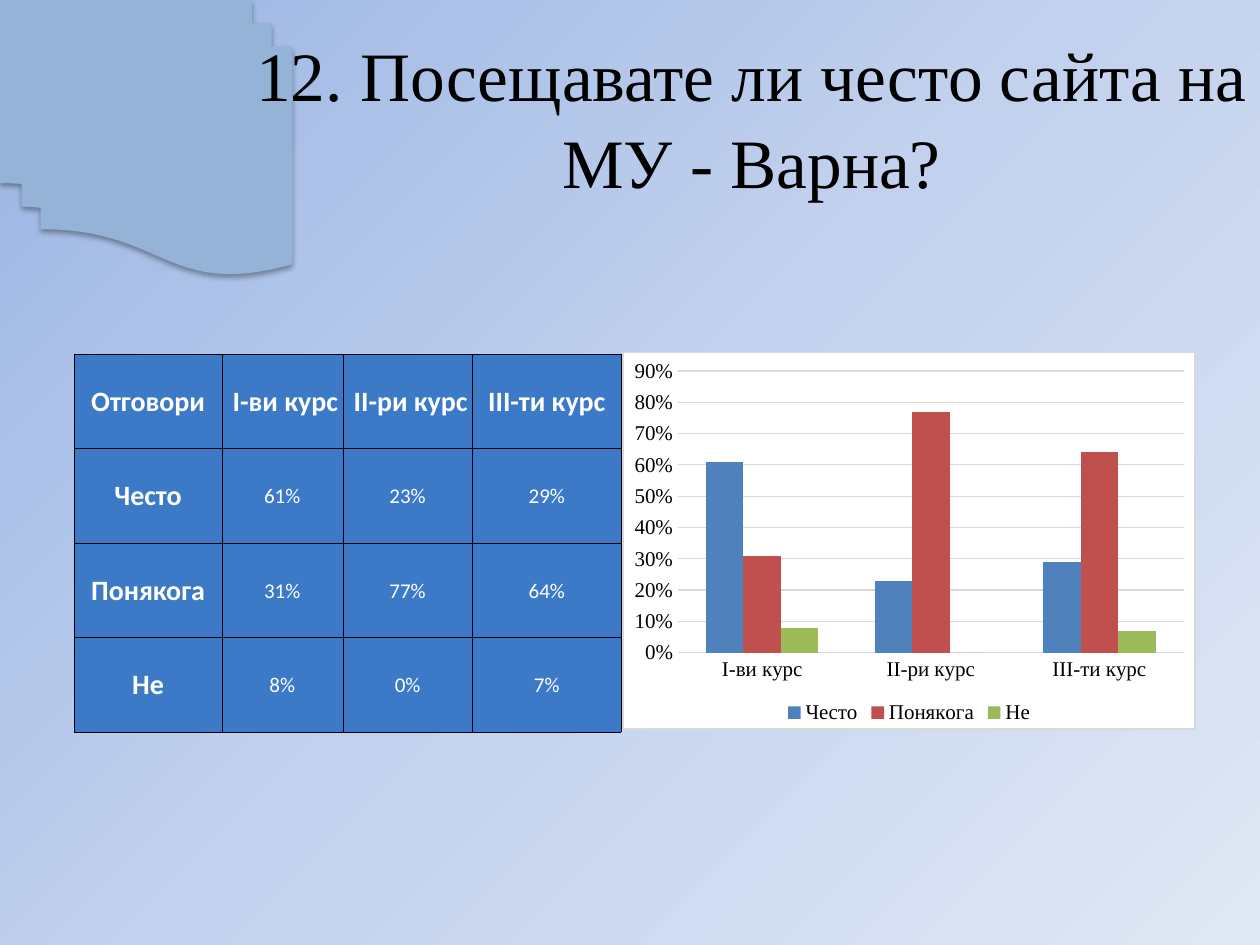
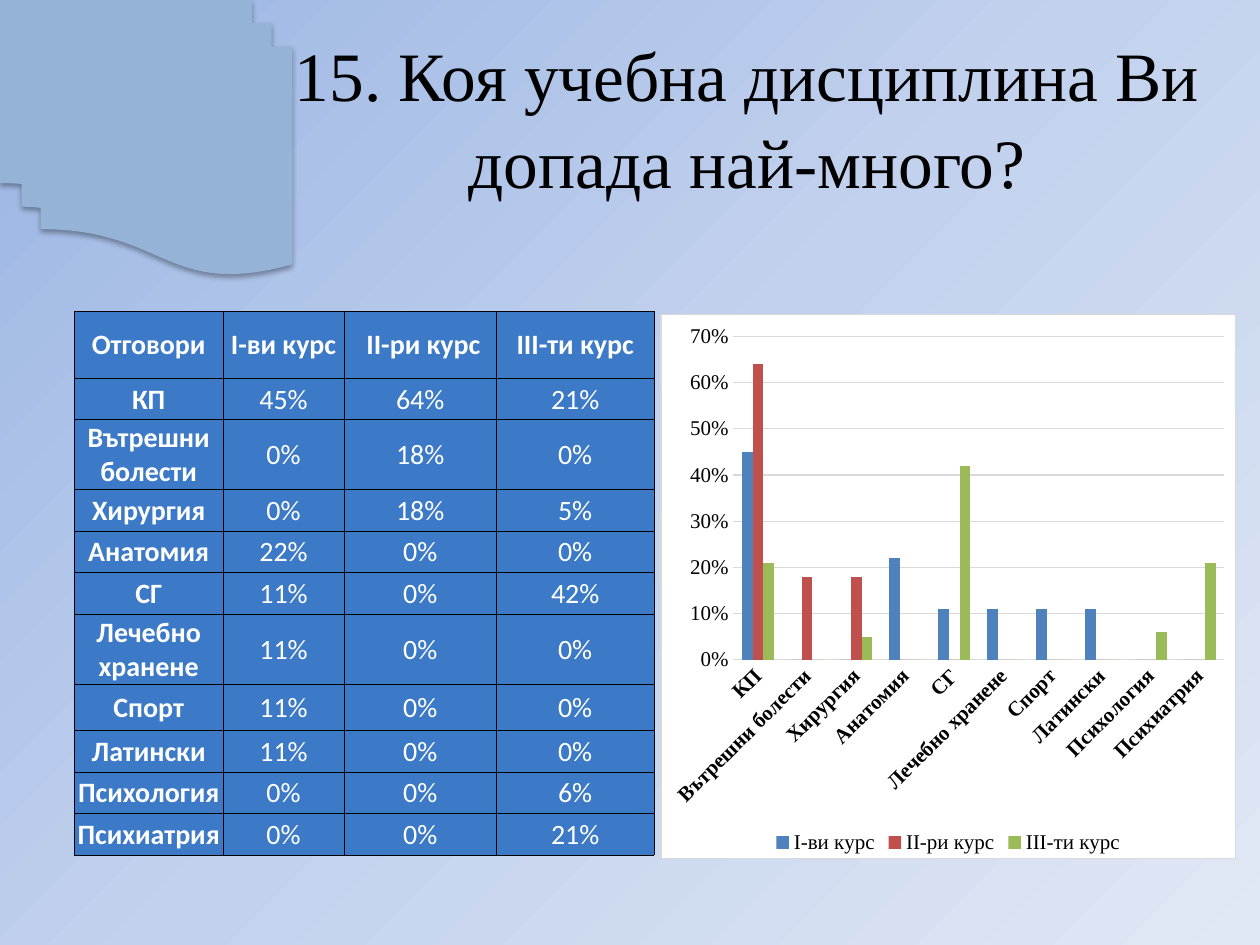
from collections import namedtuple
from copy import deepcopy
from dataclasses import dataclass

from lxml.etree import SubElement
from pptx import Presentation
from pptx.chart.data import CategoryChartData
from pptx.dml.color import RGBColor
from pptx.enum.chart import XL_CHART_TYPE, XL_LEGEND_POSITION, XL_TICK_MARK
from pptx.enum.shapes import MSO_SHAPE
from pptx.enum.text import MSO_ANCHOR, MSO_AUTO_SIZE, PP_ALIGN
from pptx.oxml.ns import qn
from pptx.util import Inches, Pt

Box = namedtuple("Box", "left top width height")


@dataclass(frozen=True)
class Theme:
    background: tuple = ("9AB5E4", "C2D1ED", "E1E8F5")
    ornament: str = "95B3D7"
    ink: str = "000000"
    paper: str = "FFFFFF"
    table_fill: str = "3C7AC8"
    grid: str = "D9D9D9"
    series: tuple = ("4F81BD", "C0504D", "9BBB59")
    title_font: str = "Times New Roman"
    table_font: str = "Calibri"
    title_size: float = 39.6
    heading_size: int = 16
    chart_size: int = 12


THEME = Theme()


def rgb(value):
    return RGBColor.from_string(value)


def place(shape, box):
    shape.left, shape.top, shape.width, shape.height = map(Inches, box)


def style_font(font, name, size, color, bold=False):
    font.name, font.size, font.bold = name, Pt(size), bold
    font.color.rgb = rgb(color)


def add_solid_fill(parent, color):
    fill = SubElement(parent, qn("a:solidFill"))
    return SubElement(fill, qn("a:srgbClr"), val=color)


def decorate_master(master, slide):
    """Give the master its gradient and the folded-paper ornament, drawn on slide and moved."""
    fill = master.background.fill
    fill.gradient()
    fill.gradient_angle = 315
    stops = master.element.find(".//" + qn("a:gsLst"))
    stops.insert(1, deepcopy(stops[0]))
    for index, stop in enumerate(fill.gradient_stops):
        stop.color.rgb = rgb(THEME.background[index])
        stop.position = index / 2

    ornament = slide.shapes.add_shape(
        MSO_SHAPE.FLOWCHART_MULTIDOCUMENT, 0, 0, Inches(2.32), Inches(2.18))
    ornament.fill.solid()
    ornament.fill.fore_color.rgb = rgb(THEME.ornament)
    ornament.line.fill.background()
    ornament.shadow.inherit = False
    ornament.element.spPr.find(qn("a:xfrm")).set("flipH", "1")
    effects = ornament.element.spPr.find(qn("a:effectLst"))
    shadow = SubElement(effects, qn("a:outerShdw"), blurRad=str(Pt(3.1)),
                        dist=str(Pt(1.8)), dir="5400000", rotWithShape="0")
    color = SubElement(shadow, qn("a:srgbClr"), val=THEME.ink)
    SubElement(color, qn("a:alpha"), val="35000")
    master.shapes.element.insert(2, ornament.element)


def set_title(slide, text, box):
    title = slide.shapes.title
    place(title, box)
    frame = title.text_frame
    frame.auto_size = MSO_AUTO_SIZE.NONE
    frame.word_wrap = True
    frame.vertical_anchor = MSO_ANCHOR.MIDDLE
    paragraph = frame.paragraphs[0]
    paragraph.alignment = PP_ALIGN.CENTER
    paragraph.line_spacing = 1.05
    run = paragraph.add_run()
    run.text = text
    style_font(run.font, THEME.title_font, THEME.title_size, THEME.ink)


def fill_cell(cell, text, size, bold):
    cell.margin_left = cell.margin_top = cell.margin_right = Inches(0.01)
    cell.margin_bottom = 0
    cell.vertical_anchor = MSO_ANCHOR.MIDDLE
    cell.fill.solid()
    cell.fill.fore_color.rgb = rgb(THEME.table_fill)
    paragraph = cell.text_frame.paragraphs[0]
    paragraph.alignment = PP_ALIGN.CENTER
    run = paragraph.add_run()
    run.text = text
    style_font(run.font, THEME.table_font, size, THEME.paper, bold)
    properties = cell._tc.get_or_add_tcPr()
    for index, side in enumerate(("lnL", "lnR", "lnT", "lnB")):
        line = SubElement(properties, qn(f"a:{side}"), w=str(Pt(0.25)))
        add_solid_fill(line, THEME.ink)
        properties.insert(index, line)


def add_answer_table(slide, box, headings, answers, widths, heights, value_size):
    table = slide.shapes.add_table(
        len(heights), len(widths), *map(Inches, box)).table
    table.first_row = table.horz_banding = False
    for column, width in zip(table.columns, widths):
        column.width = Inches(width)
    for row, height in zip(table.rows, heights):
        row.height = Inches(height)
    rows = [["Отговори", *headings]]
    rows += [[name, *(f"{value}%" for value in values)]
             for name, values in answers.items()]
    for row_index, texts in enumerate(rows):
        for column_index, text in enumerate(texts):
            is_heading = row_index == 0 or column_index == 0
            size = THEME.heading_size if is_heading else value_size
            fill_cell(table.cell(row_index, column_index), text, size, is_heading)


def style_axis(axis, bold=False):
    axis.major_tick_mark = axis.minor_tick_mark = XL_TICK_MARK.NONE
    axis.format.line.fill.background()
    style_font(axis.tick_labels.font, THEME.title_font, THEME.chart_size,
               THEME.ink, bold)


def frame_chart(chart):
    """Give the chart area a white fill and a thin grey border."""
    properties = SubElement(chart.element, qn("c:spPr"))
    add_solid_fill(properties, THEME.paper)
    border = SubElement(properties, qn("a:ln"), w=str(Pt(0.75)))
    add_solid_fill(border, THEME.grid)
    chart.element.find(qn("c:chart")).addnext(properties)


def add_answer_chart(slide, box, categories, series, maximum, slanted):
    data = CategoryChartData(number_format="0%")
    data.categories = categories
    for name, values in series:
        data.add_series(name, [value / 100 for value in values])
    chart = slide.shapes.add_chart(
        XL_CHART_TYPE.COLUMN_CLUSTERED, *map(Inches, box), data).chart
    style_font(chart.font, THEME.table_font, 10, THEME.ink)
    frame_chart(chart)
    chart.has_title = False
    chart.has_legend = True
    chart.legend.position = XL_LEGEND_POSITION.BOTTOM
    chart.legend.include_in_layout = False
    style_font(chart.legend.font, THEME.title_font, THEME.chart_size, THEME.ink)

    plot = chart.plots[0]
    plot.gap_width, plot.overlap, plot.vary_by_categories = 150, 0, False
    for column, color in zip(plot.series, THEME.series):
        column.format.fill.solid()
        column.format.fill.fore_color.rgb = rgb(color)

    style_axis(chart.category_axis, bold=slanted)
    if slanted:
        axis = chart.element.find(".//" + qn("c:catAx"))
        axis.find(qn("c:txPr")).find(qn("a:bodyPr")).set("rot", "-2700000")
    value_axis = chart.value_axis
    style_axis(value_axis)
    value_axis.minimum_scale, value_axis.maximum_scale = 0, maximum
    value_axis.major_unit = 0.1
    value_axis.tick_labels.number_format = "0%"
    value_axis.tick_labels.number_format_is_linked = False
    value_axis.has_major_gridlines = True
    gridline = value_axis.major_gridlines.format.line
    gridline.width = Pt(0.75)
    gridline.color.rgb = rgb(THEME.grid)


def build_site_visits(slide):
    headings = [" I-ви курс", " II-ри курс", "III-ти курс"]
    answers = {
        "Често": (61, 23, 29),
        "Понякога": (31, 77, 64),
        "Не": (8, 0, 7),
    }
    set_title(slide, "12. Посещавате ли често сайта на МУ - Варна?",
              Box(1.93, 0.29, 8.07, 1.25))
    add_answer_table(slide, Box(0.59, 2.81, 4.33, 2.99), headings, answers,
                     widths=(1.17, 0.96, 1.03, 1.18), heights=[0.75] * 4,
                     value_size=12)
    courses = [heading.strip() for heading in headings]
    add_answer_chart(slide, Box(4.94, 2.79, 4.55, 3), courses,
                     answers.items(), maximum=0.9, slanted=False)


def build_favourite_subjects(slide):
    headings = ["I-ви курс", " II-ри курс", "III-ти курс"]
    answers = {
        "КП": (45, 64, 21),
        "Вътрешни болести": (0, 18, 0),
        "Хирургия": (0, 18, 5),
        "Анатомия": (22, 0, 0),
        "СГ": (11, 0, 42),
        "Лечебно хранене": (11, 0, 0),
        "Спорт": (11, 0, 0),
        "Латински": (11, 0, 0),
        "Психология": (0, 0, 6),
        "Психиатрия": (0, 0, 21),
    }
    set_title(slide, "15. Коя учебна дисциплина Ви допада най-много?",
              Box(1.43, 0.29, 9, 1.25))
    add_answer_table(slide, Box(0.59, 2.47, 4.6, 4.28), headings, answers,
                     widths=(1.18, 0.96, 1.21, 1.25),
                     heights=[0.53] + [0.33] * 6 + [0.37] + [0.33] * 3,
                     value_size=16)
    courses = [heading.strip() for heading in headings]
    add_answer_chart(slide, Box(5.24, 2.49, 4.57, 4.33), list(answers),
                     zip(courses, zip(*answers.values())),
                     maximum=0.7, slanted=True)


def main():
    presentation = Presentation()
    presentation.slide_width, presentation.slide_height = Inches(10), Inches(7.5)
    title_only = presentation.slide_layouts[5]
    slides = [presentation.slides.add_slide(title_only) for _ in range(2)]
    decorate_master(presentation.slide_master, slides[0])
    build_site_visits(slides[0])
    build_favourite_subjects(slides[1])
    presentation.save("out.pptx")


if __name__ == "__main__":
    main()
